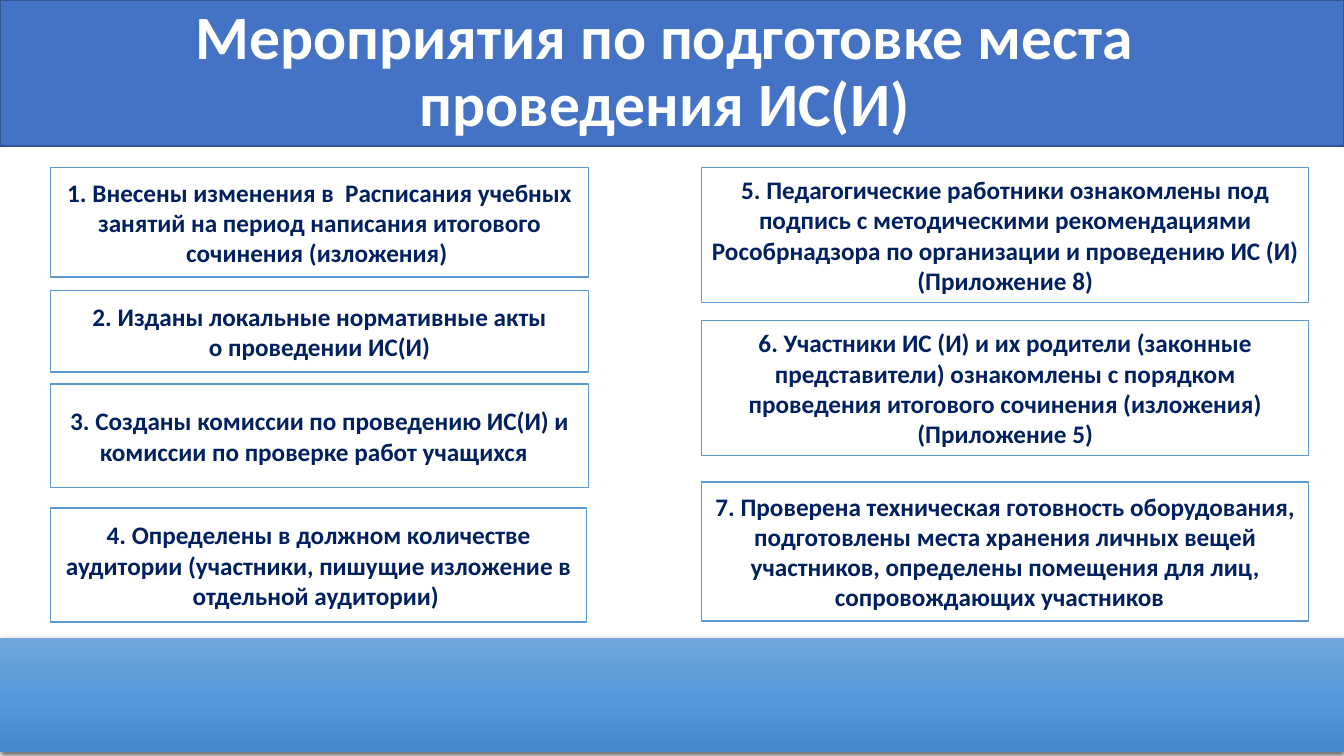
from lxml import etree
from copy import deepcopy
from pptx import Presentation
from pptx.dml.color import RGBColor
from pptx.enum.shapes import MSO_SHAPE
from pptx.enum.text import MSO_ANCHOR, PP_ALIGN
from pptx.oxml.ns import qn
from pptx.util import Inches, Pt

RECTANGLE = MSO_SHAPE.RECTANGLE
MIDDLE = MSO_ANCHOR.MIDDLE
CENTER = PP_ALIGN.CENTER
SLIDE_WIDTH = 13.33
FONT = "Calibri"

TITLE = "Мероприятия по подготовке места \vпроведения ИС(И) "
LEFT_STEPS = [
    (1.66, 5.34, 1.09, "1. Внесены изменения в  Расписания учебных занятий на период "
                       "написания итогового сочинения (изложения) "),
    (2.88, 5.34, 0.81, "2. Изданы локальные нормативные акты\n о проведении ИС(И) "),
    (3.81, 5.34, 1.03, "3. Созданы комиссии по проведению ИС(И) и комиссии по проверке "
                       "работ учащихся  "),
    (5.04, 5.32, 1.13, "4. Определены в должном количестве аудитории (участники, пишущие "
                       "изложение в отдельной аудитории) "),
]
RIGHT_STEPS = [
    (1.66, 6.02, 1.34, "5. Педагогические работники ознакомлены под подпись с методическими "
                       "рекомендациями Рособрнадзора по организации и проведению ИС (И) "
                       "(Приложение 8)"),
    (3.18, 6.02, 1.34, "6. Участники ИС (И) и их родители (законные представители) ознакомлены "
                       "с порядком проведения итогового сочинения (изложения) (Приложение 5)"),
    (4.78, 6.02, 1.38, "7. Проверена техническая готовность оборудования, подготовлены места "
                       "хранения личных вещей участников, определены помещения для лиц, "
                       "сопровождающих участников  "),
]
COLUMNS = [(0.5, LEFT_STEPS), (6.96, RIGHT_STEPS)]


def color(value):
    return RGBColor.from_string(value)


def add_rectangle(slide, left, top, width, height):
    shape = slide.shapes.add_shape(
        RECTANGLE, Inches(left), Inches(top), Inches(width), Inches(height))
    shape.shadow.inherit = False
    return shape


def add_text_box(slide, box, text, fill, line, font_color, size, spacing=1.0):
    shape = add_rectangle(slide, *box)
    shape.fill.solid()
    shape.fill.fore_color.rgb = color(fill)
    shape.line.color.rgb = color(line)
    shape.line.width = Pt(1)
    frame = shape.text_frame
    frame.word_wrap = True
    frame.vertical_anchor = MIDDLE
    frame.text = text
    for paragraph in frame.paragraphs:
        paragraph.alignment = CENTER
        paragraph.line_spacing = spacing
        paragraph.font.name = FONT
        paragraph.font.size = Pt(size)
        paragraph.font.bold = True
        paragraph.font.color.rgb = color(font_color)


def add_shadow(shape):
    effects = shape.element.spPr.find(qn("a:effectLst"))
    shadow = etree.SubElement(
        effects, qn("a:outerShdw"), blurRad=str(Pt(4.5)), dist=str(Pt(1.5)),
        dir="5400000", algn="ctr", rotWithShape="0")
    black = etree.SubElement(shadow, qn("a:srgbClr"), val="000000")
    etree.SubElement(black, qn("a:alpha"), val="63000")


def add_gradient_band(slide, box, colors):
    band = add_rectangle(slide, *box)
    band.line.fill.background()
    band.fill.gradient()
    band.fill.gradient_angle = 270
    stops = band.element.spPr.find(qn("a:gradFill")).find(qn("a:gsLst"))
    stops.insert(1, deepcopy(stops[0]))
    for index, (stop, value) in enumerate(zip(band.fill.gradient_stops, colors)):
        stop.position = index / (len(colors) - 1)
        stop.color.rgb = color(value)
    add_shadow(band)


def main():
    presentation = Presentation()
    presentation.slide_width = Inches(SLIDE_WIDTH)
    presentation.slide_height = Inches(7.5)
    slide = presentation.slides.add_slide(presentation.slide_layouts[6])
    add_text_box(slide, (0, 0, SLIDE_WIDTH, 1.45), TITLE,
                 "4472C4", "325491", "FFFFFF", 44, 0.9)
    for left, steps in COLUMNS:
        for top, width, height, text in steps:
            add_text_box(slide, (left, top, width, height), text,
                         "FFFFFF", "5B9BD5", "002060", 18)
    add_gradient_band(slide, (0, 6.33, SLIDE_WIDTH, 1.13), ["71A6DB", "559BDB", "448ACA"])
    presentation.save("out.pptx")


if __name__ == "__main__":
    main()
